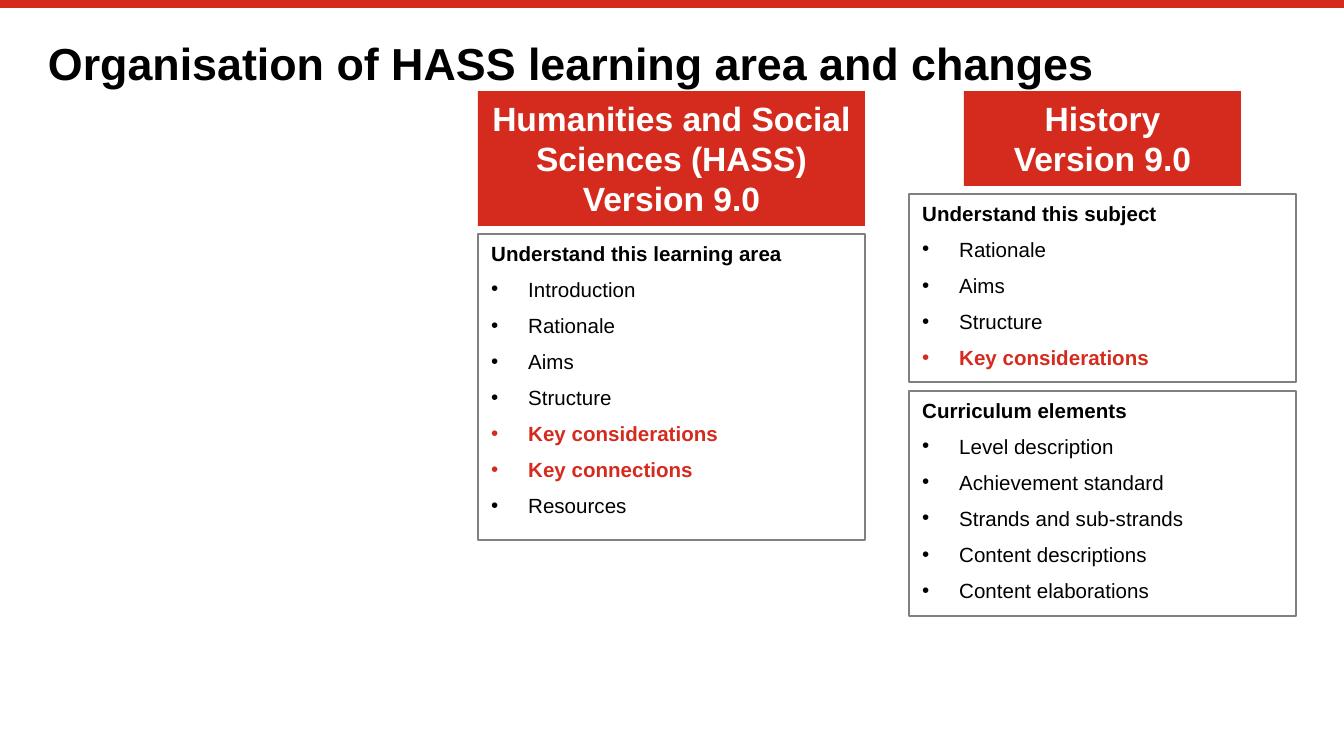
from lxml import etree
from pptx import Presentation
from pptx.dml.color import RGBColor
from pptx.enum.shapes import MSO_CONNECTOR, MSO_SHAPE
from pptx.enum.text import MSO_ANCHOR, PP_ALIGN
from pptx.oxml.ns import qn
from pptx.util import Emu, Pt

RECTANGLE = MSO_SHAPE.RECTANGLE
STRAIGHT = MSO_CONNECTOR.STRAIGHT
TOP = MSO_ANCHOR.TOP
MIDDLE = MSO_ANCHOR.MIDDLE
LEFT = PP_ALIGN.LEFT
CENTER = PP_ALIGN.CENTER

RED = RGBColor(0xD5, 0x2B, 0x1E)
GRAY = RGBColor(0x80, 0x80, 0x80)
BLACK = RGBColor(0, 0, 0)
WHITE = RGBColor(0xFF, 0xFF, 0xFF)

FONT = "Arial"
SLIDE_WIDTH = 1344
SLIDE_HEIGHT = 756
COLUMN_WIDTH = 387
HASS_LEFT = 478
HISTORY_LEFT = 909
HEADER_TOP = 91
BULLET_INDENT = 37
NEW_ITEMS = {"Key considerations", "Key connections"}


def px(value):
    return Emu(round(value * 914400 / 134.4))


def style_runs(paragraph, size, color, bold):
    for run in paragraph.runs:
        run.font.name = FONT
        run.font.size = Pt(size)
        run.font.bold = bold
        run.font.color.rgb = color


def add_bullet(paragraph):
    properties = paragraph._p.get_or_add_pPr()
    properties.set("marL", str(px(BULLET_INDENT)))
    properties.set("indent", str(-px(BULLET_INDENT)))
    bullet_font = etree.SubElement(properties, qn("a:buFont"))
    bullet_font.set("typeface", FONT)
    bullet = etree.SubElement(properties, qn("a:buChar"))
    bullet.set("char", "•")


def add_box(slide, left, top, width, height):
    box = slide.shapes.add_shape(RECTANGLE, px(left), px(top), px(width), px(height))
    box.shadow.inherit = False
    box.text_frame.word_wrap = True
    box.text_frame.vertical_anchor = TOP
    return box


def add_header(slide, left, width, height, lines):
    box = add_box(slide, left, HEADER_TOP, width, height)
    box.fill.solid()
    box.fill.fore_color.rgb = RED
    box.line.fill.background()
    box.text_frame.text = "\n".join(lines)
    for paragraph in box.text_frame.paragraphs:
        paragraph.alignment = CENTER
        style_runs(paragraph, 18, WHITE, True)


def add_list_box(slide, left, top, height, heading, items):
    box = add_box(slide, left, top, COLUMN_WIDTH, height)
    box.fill.background()
    box.line.color.rgb = GRAY
    box.line.width = Pt(1)
    box.text_frame.text = "\n".join([heading, *items])
    heading_paragraph, *item_paragraphs = box.text_frame.paragraphs
    heading_paragraph.alignment = LEFT
    style_runs(heading_paragraph, 11, BLACK, True)
    for paragraph in item_paragraphs:
        is_new = paragraph.text in NEW_ITEMS
        paragraph.alignment = LEFT
        paragraph.space_before = Pt(6.1)
        add_bullet(paragraph)
        style_runs(paragraph, 11, RED if is_new else BLACK, is_new)


def add_title(slide, text):
    box = slide.shapes.add_textbox(px(48), px(40), px(1248), px(52))
    frame = box.text_frame
    frame.word_wrap = True
    frame.vertical_anchor = MIDDLE
    frame.margin_left = frame.margin_right = 0
    frame.margin_top = frame.margin_bottom = 0
    frame.text = text
    frame.paragraphs[0].line_spacing = 0.9
    style_runs(frame.paragraphs[0], 24, BLACK, True)


def add_top_rule(slide):
    rule = slide.shapes.add_connector(STRAIGHT, 0, px(4), px(SLIDE_WIDTH), px(4))
    rule.line.color.rgb = RED
    rule.line.width = Pt(4.2)
    etree.SubElement(rule._element.spPr, qn("a:effectLst"))


def main():
    presentation = Presentation()
    presentation.slide_width = px(SLIDE_WIDTH)
    presentation.slide_height = px(SLIDE_HEIGHT)
    slide = presentation.slides.add_slide(presentation.slide_layouts[6])

    add_top_rule(slide)
    add_list_box(slide, HISTORY_LEFT, 391, 225, "Curriculum elements", [
        "Level description", "Achievement standard", "Strands and sub-strands",
        "Content descriptions", "Content elaborations"])
    add_list_box(slide, HISTORY_LEFT, 194, 188, "Understand this subject", [
        "Rationale", "Aims", "Structure", "Key considerations"])
    add_header(slide, 964, 277, 95, ["History", "Version 9.0"])
    add_list_box(slide, HASS_LEFT, 234, 306, "Understand this learning area", [
        "Introduction", "Rationale", "Aims", "Structure",
        "Key considerations", "Key connections", "Resources"])
    add_header(slide, HASS_LEFT, COLUMN_WIDTH, 135,
               ["Humanities and Social Sciences (HASS)", "Version 9.0"])
    add_title(slide, "Organisation of HASS learning area and changes")

    presentation.save("out.pptx")


if __name__ == "__main__":
    main()
